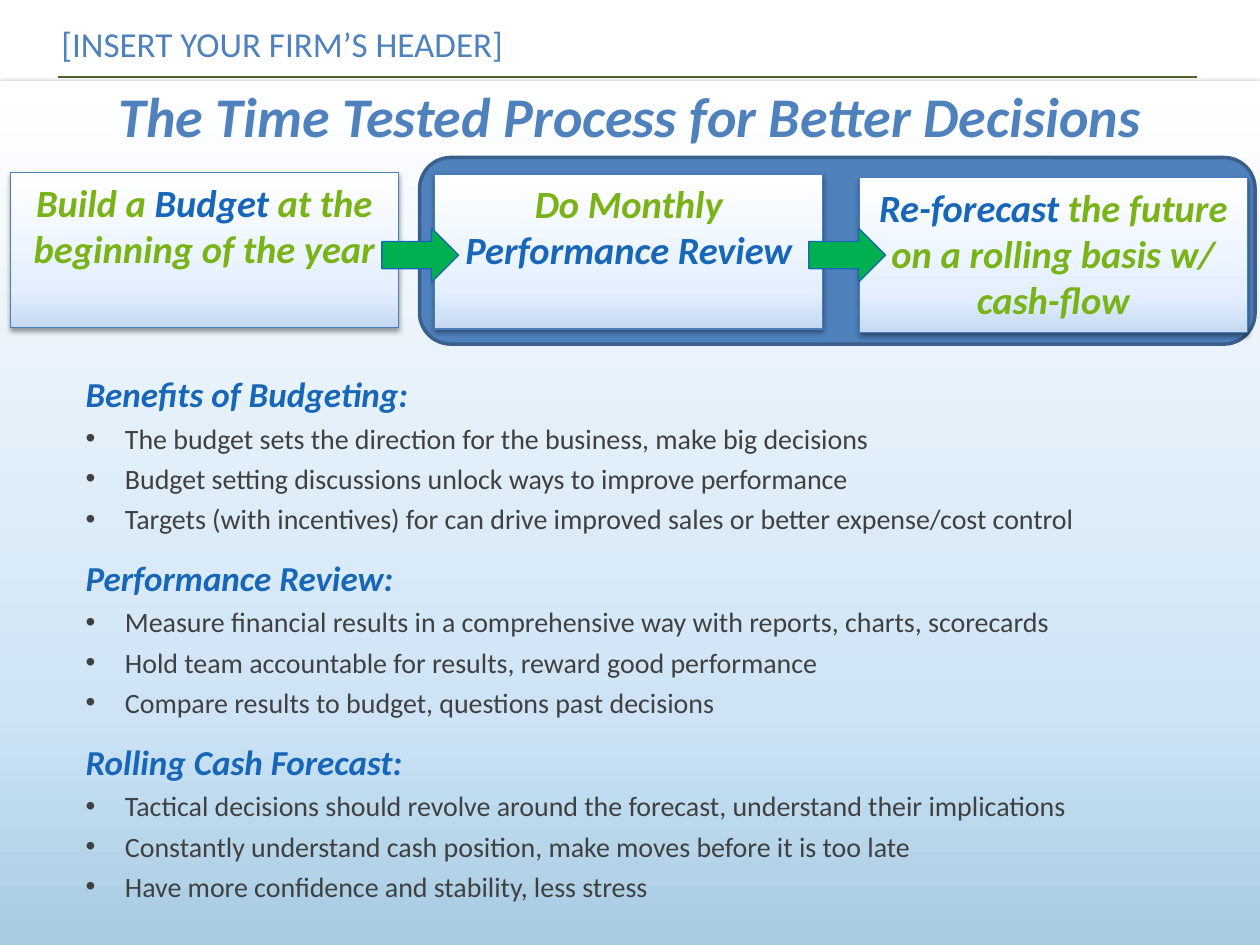
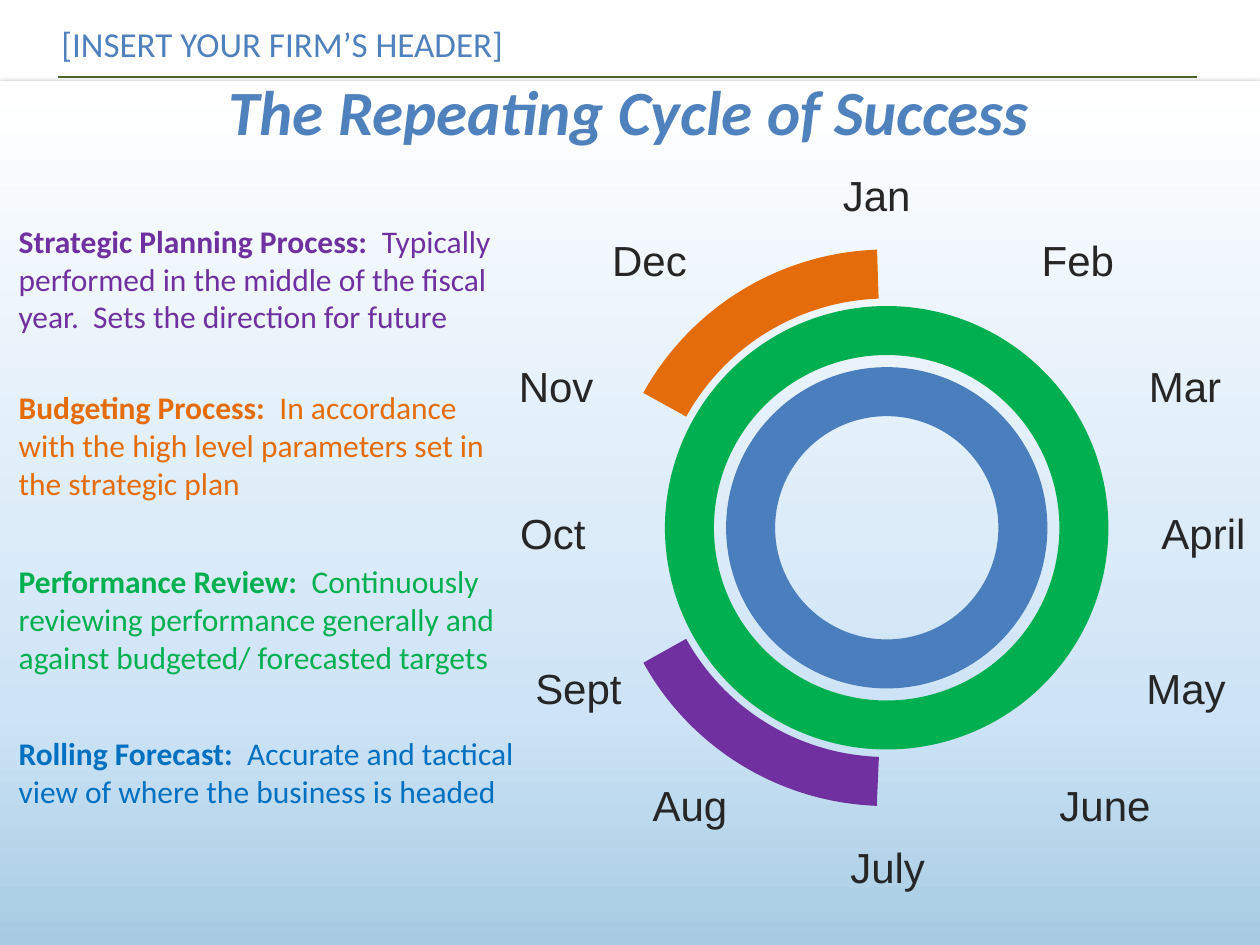
from dataclasses import dataclass
from math import cos, radians, sin

from lxml.etree import SubElement
from pptx import Presentation
from pptx.dml.color import RGBColor
from pptx.enum.shapes import MSO_CONNECTOR, MSO_SHAPE
from pptx.enum.text import MSO_ANCHOR, PP_ALIGN
from pptx.oxml.ns import qn
from pptx.util import Pt

COLORS = {
    "blue": "4F81BD", "dark_blue": "1766B8", "lime": "79B317", "rule": "4F6228",
    "panel_line": "3A5F8C", "card_line": "4A7EBB", "text": "404040", "month": "262626",
    "ring": "4B7EBC", "purple": "7030A0", "orange": "E46C0A", "green": "00B050",
    "sky": "0070C0",
}
PAGE_GRADIENT = [(0, "A6CBE2"), (27, "CEE4F6"), (100, "FFFFFF")]
CARD_GRADIENT = [(0, "C6D9F1"), (25, "E4F0FF"), (100, "FFFFFF")]
PAGE_W, PAGE_H = 720, 540
CENTER_X, CENTER_Y = 506.7, 301.6
RING_WIDTH = 28


@dataclass
class Box:
    left: float
    top: float
    width: float
    height: float

    def lengths(self) -> list:
        return [Pt(v) for v in (self.left, self.top, self.width, self.height)]


@dataclass
class Span:
    text: str
    color: str
    size: float
    bold: bool = False
    italic: bool = False
    font: str = "Calibri"


@dataclass
class Card:
    top: float
    wording: list[tuple[str, str]]


@dataclass
class Topic:
    heading: str
    points: list[str]


@dataclass
class Phase:
    name: str
    detail: str
    color: str
    top: float
    width: float


@dataclass
class Month:
    name: str
    left: float
    top: float
    width: float


@dataclass
class Arc:
    color: str
    start: int
    end: int


CARDS = [
    Card(98.6, [("Build a ", "lime"), ("Budget", "dark_blue"),
                (" at the beginning of the year", "lime")]),
    Card(99.4, [("Do Monthly ", "lime"), ("Performance Review", "dark_blue")]),
    Card(101.5, [("Re-forecast", "dark_blue"),
                 (" the future on a rolling basis w/ cash-flow", "lime")]),
]
TOPICS = [
    Topic("Benefits of Budgeting:", [
        "The budget sets the direction for the business, make big decisions",
        "Budget setting discussions unlock ways to improve performance",
        "Targets (with incentives) for can drive improved sales or better expense/cost control",
    ]),
    Topic("Performance Review:", [
        "Measure financial results in a comprehensive way with reports, charts, scorecards",
        "Hold team accountable for results, reward good performance",
        "Compare results to budget, questions past decisions",
    ]),
    Topic("Rolling Cash Forecast:", [
        "Tactical decisions should revolve around the forecast, understand their implications",
        "Constantly understand cash position, make moves before it is too late",
        "Have more confidence and stability, less stress",
    ]),
]
PHASES = [
    Phase("Strategic Planning Process:  ", "Typically performed in the middle of the fiscal "
          "year.  Sets the direction for future", "purple", 115.2, 295.2),
    Phase("Budgeting Process:  ", "In accordance with the high level parameters set in "
          "the strategic plan", "orange", 210.2, 295.2),
    Phase("Performance Review:  ", "Continuously reviewing performance generally and "
          "against budgeted/ forecasted targets", "green", 309.6, 306),
    Phase("Rolling Forecast:  ", "Accurate and tactical view of where the business is headed",
          "sky", 397.4, 304.6),
]
MONTHS = [
    Month("Jan", 474.5, 93.6, 54), Month("Feb", 588.2, 130.3, 56.2),
    Month("Mar", 649.4, 202.3, 56.2), Month("April", 656.6, 286.6, 64.1),
    Month("May", 648, 375.1, 60.5), Month("June", 598.3, 442.1, 67),
    Month("July", 478.8, 477.4, 57.6), Month("Aug", 365.8, 442.1, 58.3),
    Month("Sept", 298.8, 375.1, 64.8), Month("Oct", 290.2, 286.6, 52.6),
    Month("Nov", 289.4, 202.3, 57.6), Month("Dec", 342.7, 130.3, 57.6),
]
RINGS = [("ring", 77.8), ("green", 112.7)]
ARC_RADIUS = 145
ARCS = [Arc("orange", 209, 268), Arc("purple", 151, 92)]


def rgb(name: str) -> RGBColor:
    return RGBColor.from_string(COLORS[name])


def write(p, spans: list[Span], align=PP_ALIGN.LEFT) -> None:
    p.alignment = align
    for span in spans:
        r = p.add_run()
        r.text = span.text
        r.font.name, r.font.size = span.font, Pt(span.size)
        r.font.bold, r.font.italic = span.bold, span.italic
        r.font.color.rgb = rgb(span.color)


def add_text(s, box: Box, spans: list[Span], align=PP_ALIGN.LEFT,
             anchor=MSO_ANCHOR.TOP, wrap: bool = True) -> None:
    tf = s.shapes.add_textbox(*box.lengths()).text_frame
    tf.word_wrap, tf.vertical_anchor = wrap, anchor
    write(tf.paragraphs[0], spans, align)


def style_line(sp, line: str | None, width: float) -> None:
    if line:
        sp.line.color.rgb, sp.line.width = rgb(line), Pt(width)
    else:
        sp.line.fill.background()


def add_shape(s, kind, box: Box, fill: str | None = None, line: str | None = None,
              width: float = 0.75):
    sp = s.shapes.add_shape(kind, *box.lengths())
    sp.shadow.inherit = False
    if fill:
        sp.fill.solid()
        sp.fill.fore_color.rgb = rgb(fill)
    else:
        sp.fill.background()
    style_line(sp, line, width)
    return sp


def add_gradient_box(s, box: Box, stops: list[tuple[int, str]], line: str | None = None):
    """Rectangle shaded from bottom to top, with a soft shadow below."""
    sp = add_shape(s, MSO_SHAPE.RECTANGLE, box, line=line)
    sp.fill.gradient()
    sp.fill.gradient_angle = 90
    props = sp._element.spPr
    stop_list = props.find(qn("a:gradFill")).find(qn("a:gsLst"))
    for old in list(stop_list):
        stop_list.remove(old)
    for percent, color in stops:
        stop = SubElement(stop_list, qn("a:gs"), pos=str(percent * 1000))
        SubElement(stop, qn("a:srgbClr"), val=color)
    shadow = SubElement(props.find(qn("a:effectLst")), qn("a:outerShdw"),
                        blurRad=str(Pt(3.1)), dist=str(Pt(1.6)), dir="5400000",
                        rotWithShape="0")
    black = SubElement(shadow, qn("a:srgbClr"), val="000000")
    SubElement(black, qn("a:alpha"), val="38000")
    return sp


def add_page(prs, title: str, title_box: Box, title_size: float):
    s = prs.slides.add_slide(prs.slide_layouts[6])
    rule = s.shapes.add_connector(MSO_CONNECTOR.STRAIGHT, Pt(33), Pt(44), Pt(684), Pt(44))
    style_line(rule, "rule", 1)
    SubElement(rule._element.spPr, qn("a:effectLst"))
    add_text(s, Box(28, 9.4, 312.5, 31.7),
             [Span("[INSERT YOUR FIRM’S HEADER]", "blue", 20)])
    add_gradient_box(s, Box(0, 46, PAGE_W, PAGE_H - 46), PAGE_GRADIENT)
    add_text(s, title_box, [Span(title, "blue", title_size, True, True)],
             PP_ALIGN.CENTER, MSO_ANCHOR.MIDDLE)
    return s


def add_bullet(p) -> None:
    props = p._p.get_or_add_pPr()
    props.set("marL", str(Pt(22.5)))
    props.set("indent", str(Pt(-22.5)))
    SubElement(props, qn("a:buFont"), typeface="Arial")
    SubElement(props, qn("a:buChar"), char="•")


def add_topics(s) -> None:
    tf = s.shapes.add_textbox(*Box(41.8, 204.5, 685.4, 322.6).lengths()).text_frame
    tf.word_wrap = True
    for i, topic in enumerate(TOPICS):
        p = tf.add_paragraph() if i else tf.paragraphs[0]
        p.line_spacing = 1.5 if i else 1.2
        write(p, [Span(topic.heading, "dark_blue", 20, True, True)])
        for point in topic.points:
            p = tf.add_paragraph()
            p.line_spacing = 1.2
            write(p, [Span(point, "text", 16)])
            add_bullet(p)


def build_process(prs) -> None:
    s = add_page(prs, "The Time Tested Process for Better Decisions",
                 Box(0, 43.2, PAGE_W, 45.4), 32)
    panel = Box(239.8, 90, 477.4, 106.6)
    add_shape(s, MSO_SHAPE.ROUNDED_RECTANGLE, panel, "blue", "panel_line", 2)
    add_topics(s)
    for i, card in enumerate(CARDS):
        box = Box(5.8 + 242.6 * i, card.top, 221.8, 88.6)
        tf = add_gradient_box(s, box, CARD_GRADIENT, "card_line").text_frame
        tf.word_wrap, tf.vertical_anchor = True, MSO_ANCHOR.TOP
        spans = [Span(text, color, 22, True, True) for text, color in card.wording]
        write(tf.paragraphs[0], spans, PP_ALIGN.CENTER)
    for i in range(len(CARDS) - 1):
        add_shape(s, MSO_SHAPE.RIGHT_ARROW, Box(218.2 + 244 * i, 130.3, 43.9, 31),
                  "green", "dark_blue")


def add_arc(s, arc: Arc) -> None:
    step = 1 if arc.end > arc.start else -1
    points = [(Pt(CENTER_X + ARC_RADIUS * cos(radians(a))),
               Pt(CENTER_Y + ARC_RADIUS * sin(radians(a))))
              for a in range(arc.start, arc.end + step, step)]
    builder = s.shapes.build_freeform(*points[0])
    builder.add_line_segments(points[1:], close=False)
    sp = builder.convert_to_shape()
    sp.shadow.inherit = False
    sp.fill.background()
    style_line(sp, arc.color, RING_WIDTH)


def build_cycle(prs) -> None:
    s = add_page(prs, "The Repeating Cycle of Success", Box(58.3, 40.3, 601.9, 45.4), 36)
    for phase in PHASES:
        sp = add_shape(s, MSO_SHAPE.TRAPEZOID, Box(3.6, phase.top, phase.width, 87.8))
        sp.adjustments[0] = 0
        tf = sp.text_frame
        tf.word_wrap, tf.vertical_anchor = True, MSO_ANCHOR.MIDDLE
        write(tf.paragraphs[0], [Span(phase.name, phase.color, 18, True),
                                 Span(phase.detail, phase.color, 18)])
    for month in MONTHS:
        add_text(s, Box(month.left, month.top, month.width, 36),
                 [Span(month.name, "month", 24, font="Arial")], wrap=False)
    for color, radius in RINGS:
        box = Box(CENTER_X - radius, CENTER_Y - radius, 2 * radius, 2 * radius)
        add_shape(s, MSO_SHAPE.OVAL, box, line=color, width=RING_WIDTH)
    for arc in ARCS:
        add_arc(s, arc)


def main() -> None:
    prs = Presentation()
    prs.slide_width, prs.slide_height = Pt(PAGE_W), Pt(PAGE_H)
    build_process(prs)
    build_cycle(prs)
    prs.save("out.pptx")


if __name__ == "__main__":
    main()
